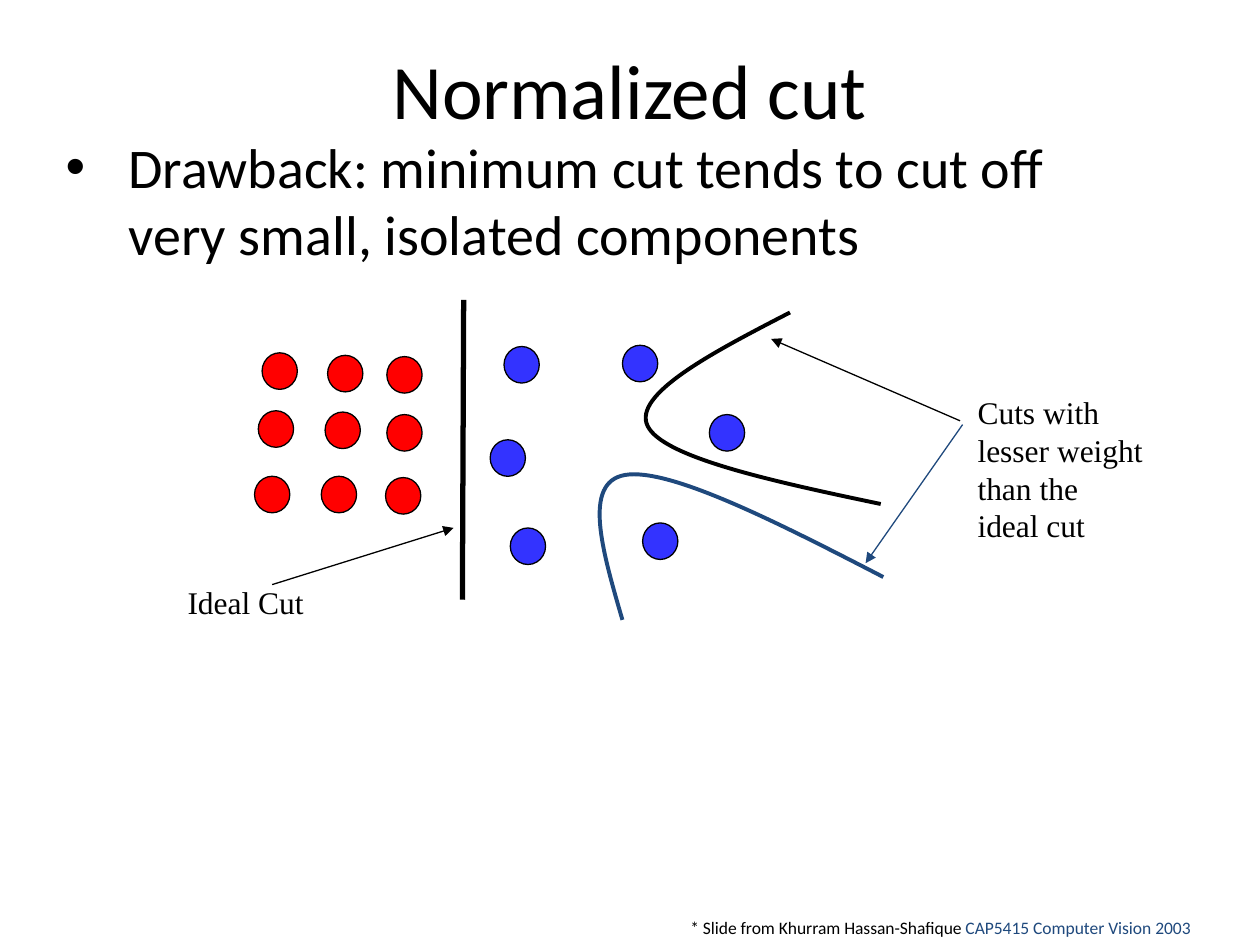
from lxml import etree
from pptx import Presentation
from pptx.dml.color import RGBColor
from pptx.enum.shapes import MSO_CONNECTOR, MSO_SHAPE
from pptx.enum.text import MSO_ANCHOR, MSO_AUTO_SIZE, PP_ALIGN
from pptx.oxml.ns import qn
from pptx.util import Inches, Pt

OVAL = MSO_SHAPE.OVAL
STRAIGHT = MSO_CONNECTOR.STRAIGHT
MIDDLE = MSO_ANCHOR.MIDDLE
CENTER = PP_ALIGN.CENTER
GROW = MSO_AUTO_SIZE.SHAPE_TO_FIT_TEXT

BLACK, NAVY, RED, BLUE = "000000", "1F497D", "FF0000", "3333FF"
SANS, SERIF = "Calibri", "Times New Roman"

TITLE = "Normalized cut"
BODY = "Drawback: minimum cut tends to cut off very small, isolated components"

# Left and top of each graph node
NODE_SIZE = (0.28, 0.29)
NODES = {
    RED: [(2.08, 2.8), (2.6, 2.82), (3.07, 2.83),
          (2.05, 3.26), (2.58, 3.27), (3.07, 3.29),
          (2.02, 3.78), (2.55, 3.78), (3.06, 3.79)],
    BLUE: [(4, 2.75), (4.94, 2.74), (3.89, 3.49),
           (5.63, 3.29), (4.05, 4.19), (5.1, 4.15)],
}
# Start, end, colour, width, arrowhead
LINES = [
    ((3.68, 2.38), (3.67, 4.76), BLACK, 3, False),
    ((2.16, 4.64), (3.6, 4.19), BLACK, 0.75, True),
    ((7.62, 3.34), (6.12, 2.69), BLACK, 0.75, True),
    ((7.64, 3.37), (6.87, 4.47), NAVY, 0.75, True),
]
# Start point, then two controls and an end for each Bezier segment
CUTS = [
    ([(6.27, 2.48), (5.65, 2.8), (5.02, 3.13), (5.14, 3.38),
      (5.26, 3.63), (6.13, 3.82), (6.99, 4)], BLACK),
    ([(7.01, 4.58), (6.16, 4.14), (5.31, 3.71), (4.96, 3.77),
      (4.62, 3.83), (4.78, 4.37), (4.94, 4.92)], NAVY),
]
# Box, font, size, paragraphs of (text, colour) runs
LABELS = [
    ((1.39, 4.58, 1.43, 0.5), SERIF, 18, [[("Ideal Cut", BLACK)]]),
    ((7.66, 3.07, 1.95, 1.7), SERIF, 18,
     [[(line, BLACK)] for line in
      ("Cuts with", "lesser weight", "than the", "ideal cut")]),
    ((5.38, 7.23, 4.62, 0.27), SANS, 10,
     [[("* Slide from Khurram Hassan-Shafique ", BLACK),
       ("CAP5415 Computer Vision 2003", NAVY)]]),
]


def rgb(value):
    return RGBColor.from_string(value)


def inches(values):
    return [Inches(v) for v in values]


def set_line(shape, color, width):
    shape.line.color.rgb = rgb(color)
    shape.line.width = Pt(width)


def add_run(p, text, font, size, color):
    r = p.add_run()
    r.text = text
    for name, value in {"name": font, "size": Pt(size)}.items():
        setattr(r.font, name, value)
    r.font.color.rgb = rgb(color)


def fill_placeholder(sp, box, text, size):
    sp.left, sp.top, sp.width, sp.height = inches(box)
    p = sp.text_frame.paragraphs[0]
    p.space_before = Pt(0)
    add_run(p, text, SANS, size, BLACK)
    return p


def add_node(shapes, at, color):
    sp = shapes.add_shape(OVAL, *inches(at + NODE_SIZE))
    sp.shadow.inherit = False
    sp.fill.solid()
    sp.fill.fore_color.rgb = rgb(color)
    set_line(sp, BLACK, 0.75)


def add_line(shapes, start, end, color, width, arrow):
    cx = shapes.add_connector(STRAIGHT, *inches(start + end))
    set_line(cx, color, width)
    if arrow:
        etree.SubElement(cx.line._get_or_add_ln(), qn("a:tailEnd"), type="triangle")
    etree.SubElement(cx._element.spPr, qn("a:effectLst"))


def add_curve(shapes, points, color):
    """Draw the points as a polyline, then turn each three steps into a Bezier."""
    builder = shapes.build_freeform(*inches(points[0]), scale=1.0)
    builder.add_line_segments([inches(pt) for pt in points[1:]], close=False)
    sp = builder.convert_to_shape()
    sp.shadow.inherit = False
    sp.fill.background()
    set_line(sp, color, 2.25)
    steps = list(sp._element.iter(qn("a:lnTo")))
    for i in range(0, len(steps), 3):
        bezier = etree.Element(qn("a:cubicBezTo"))
        steps[i].addprevious(bezier)
        for step in steps[i:i + 3]:
            bezier.append(step[0])
            step.getparent().remove(step)


def add_label(shapes, box, font, size, paragraphs):
    tf = shapes.add_textbox(*inches(box)).text_frame
    tf.word_wrap = False
    tf.auto_size = GROW
    for i, runs in enumerate(paragraphs):
        p = tf.add_paragraph() if i else tf.paragraphs[0]
        for text, color in runs:
            add_run(p, text, font, size, color)


def main():
    prs = Presentation()
    prs.slide_width, prs.slide_height = inches((10, 7.5))
    s = prs.slides.add_slide(prs.slide_layouts[1])
    title, body = s.placeholders

    p = fill_placeholder(title, (0.5, 0.08, 9, 1.25), TITLE, 44)
    p.alignment = CENTER
    title.text_frame.vertical_anchor = MIDDLE

    p = fill_placeholder(body, (0.42, 1, 8.83, 5.75), BODY, 32)
    pPr = p._p.get_or_add_pPr()
    pPr.set("marL", str(Inches(0.5)))
    pPr.set("indent", str(Inches(-0.5)))
    etree.SubElement(pPr, qn("a:buChar"), char="•")

    for color, spots in NODES.items():
        for at in spots:
            add_node(s.shapes, at, color)
    for line in LINES:
        add_line(s.shapes, *line)
    for cut in CUTS:
        add_curve(s.shapes, *cut)
    for label in LABELS:
        add_label(s.shapes, *label)

    prs.save("out.pptx")


if __name__ == "__main__":
    main()
